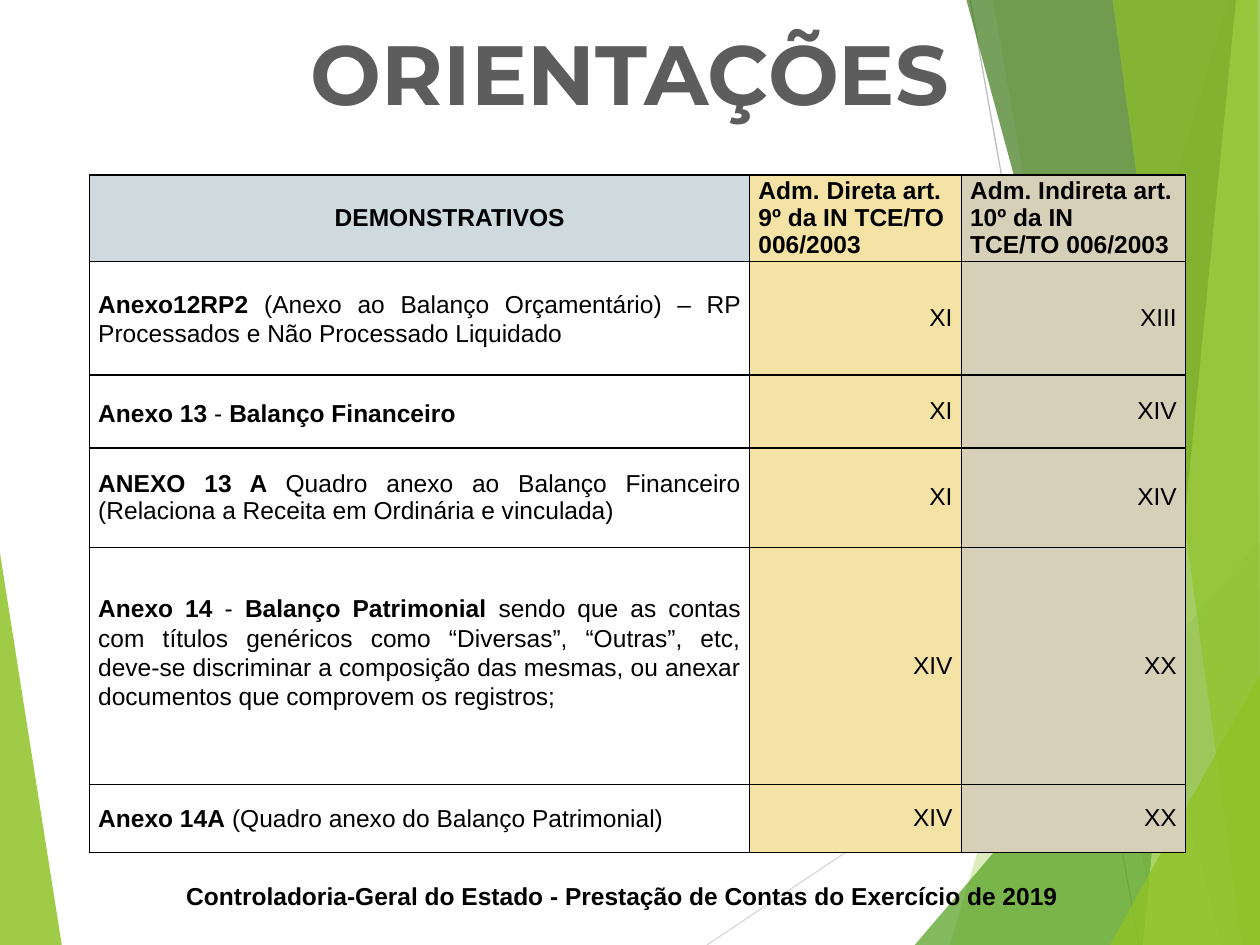
from dataclasses import dataclass

import lxml.etree
import pptx
import pptx.dml.color
import pptx.enum.shapes
import pptx.enum.text
import pptx.oxml.ns
import pptx.util

Inches = pptx.util.Inches
RGBColor = pptx.dml.color.RGBColor
Align = pptx.enum.text.PP_ALIGN
Anchor = pptx.enum.text.MSO_ANCHOR
qn = pptx.oxml.ns.qn

BLACK = RGBColor(0x00, 0x00, 0x00)
TITLE_GRAY = RGBColor(0x5D, 0x5D, 0x5D)
LIGHT_GRAY = RGBColor(0xD9, 0xD9, 0xD9)
MID_GRAY = RGBColor(0xBF, 0xBF, 0xBF)
LIME = RGBColor(0x90, 0xC2, 0x26)
GREEN = RGBColor(0x54, 0xA0, 0x21)
DARK_GREEN = RGBColor(0x3F, 0x78, 0x19)
PALE_LIME = RGBColor(0xC0, 0xE4, 0x74)
BLUE_GRAY = RGBColor(0xCF, 0xDA, 0xDF)
YELLOW = RGBColor(0xF5, 0xE3, 0xA5)
BEIGE = RGBColor(0xD6, 0xD0, 0xB8)

WIDTH, HEIGHT = 10, 7.5
Point = tuple[float, float]


@dataclass
class Facet:
    points: list[Point]
    color: RGBColor
    opacity: int


@dataclass
class Ray:
    start: Point
    end: Point
    color: RGBColor


@dataclass
class Span:
    text: str
    bold: bool = False


@dataclass
class Para:
    spans: list[Span]
    align: Align = Align.JUSTIFY
    spacing: float = 1.07
    margin: float = 0
    indent: float = 0


@dataclass
class Row:
    height: float
    description: Para
    direct: str
    indirect: str
    bottom: float = 0


RAYS = [
    Ray((5.61, HEIGHT), (WIDTH, 4.57), LIGHT_GRAY),
    Ray((7.7, 0), (9.04, HEIGHT), MID_GRAY),
]
FACETS = [
    Facet([(0, 4.39), (0.49, HEIGHT), (0, HEIGHT)], LIME, 85),
    Facet([(9.75, 0), (7.54, HEIGHT), (WIDTH, HEIGHT), (WIDTH, 0)], LIME, 30),
    Facet([(7.88, 0), (9.19, HEIGHT), (WIDTH, HEIGHT), (WIDTH, 0)], LIME, 20),
    Facet([(7.26, HEIGHT), (WIDTH, 4.29), (WIDTH, HEIGHT)], GREEN, 72),
    Facet([(7.67, 0), (9.7, HEIGHT), (WIDTH, HEIGHT), (WIDTH, 0)], DARK_GREEN, 70),
    Facet([(9.81, 0), (9.07, HEIGHT), (WIDTH, HEIGHT), (WIDTH, 0)], PALE_LIME, 70),
    Facet([(8.83, 0), (9.86, HEIGHT), (WIDTH, HEIGHT), (9.98, 0)], LIME, 65),
    Facet([(8.81, HEIGHT), (WIDTH, 5.35), (WIDTH, HEIGHT)], LIME, 80),
]

COLUMNS = [5.24, 1.68, 1.78]
FILLS = [None, YELLOW, BEIGE]
HEADER_HEIGHT = 0.63
HEADERS = [
    [Para([Span("DEMONSTRATIVOS", True)], Align.CENTER, 0.98, indent=0.48)],
    [Para([Span("Adm. Direta art. 9º da IN TCE/TO 006/2003", True)], Align.LEFT, 0.98)],
    [
        Para([Span("Adm. Indireta art. 10º da IN", True)], Align.LEFT, 0.98),
        Para([Span("TCE/TO 006/2003", True)], Align.LEFT, 0.98),
    ],
]
ROWS = [
    Row(0.9, Para([
        Span("Anexo12RP2 ", True),
        Span("(Anexo ao Balanço Orçamentário) – RP Processados e Não Processado Liquidado"),
    ]), "XI", "XIII"),
    Row(0.58, Para([
        Span("Anexo 13", True), Span(" - "), Span("Balanço Financeiro", True),
    ], spacing=1.15, margin=0.01, indent=-0.01), "XI", "XIV"),
    Row(0.79, Para([
        Span("ANEXO 13 A ", True),
        Span("Quadro anexo ao Balanço Financeiro (Relaciona a Receita em Ordinária e vinculada)"),
    ], spacing=0.98), "XI", "XIV"),
    Row(1.88, Para([
        Span("Anexo 14", True), Span(" - "), Span("Balanço Patrimonial ", True),
        Span("sendo que as contas com títulos genéricos como “Diversas”, “Outras”, etc, "
             "deve-se discriminar a composição das mesmas, ou anexar documentos que "
             "comprovem os registros;"),
    ]), "XIV", "XX", bottom=0.22),
    Row(0.54, Para([
        Span("Anexo 14A", True), Span(" (Quadro anexo do Balanço Patrimonial)"),
    ]), "XIV", "XX"),
]


def draw_ray(page, ray: Ray) -> None:
    line = page.shapes.add_connector(
        pptx.enum.shapes.MSO_CONNECTOR.STRAIGHT,
        *(Inches(value) for value in ray.start + ray.end))
    line.line.color.rgb = ray.color
    line.line.width = pptx.util.Pt(0.75)
    lxml.etree.SubElement(line._element.spPr, qn("a:effectLst"))


def draw_facet(page, facet: Facet) -> None:
    first, *others = [(Inches(x), Inches(y)) for x, y in facet.points]
    builder = page.shapes.build_freeform(*first)
    builder.add_line_segments(others)
    shape = builder.convert_to_shape()
    shape.shadow.inherit = False
    shape.line.fill.background()
    shape.fill.solid()
    shape.fill.fore_color.rgb = facet.color
    color = shape._element.spPr.find(".//" + qn("a:srgbClr"))
    lxml.etree.SubElement(color, qn("a:alpha"), val=str(facet.opacity * 1000))


def style_font(font, name: str, size: float, color: RGBColor) -> None:
    font.name = name
    font.size = pptx.util.Pt(size)
    font.color.rgb = color


def add_label(page, area: tuple, text: str, name: str, size: float, color: RGBColor) -> None:
    box = page.shapes.add_textbox(*(Inches(value) for value in area))
    box.text_frame.word_wrap = True
    para = box.text_frame.paragraphs[0]
    para.text = text
    para.alignment = Align.CENTER
    para.font.bold = True
    style_font(para.font, name, size, color)


def add_borders(cell) -> None:
    properties = cell._tc.get_or_add_tcPr()
    for side in ("lnL", "lnR", "lnT", "lnB"):
        border = lxml.etree.SubElement(properties, qn("a:" + side), w=str(pptx.util.Pt(1)))
        fill = lxml.etree.SubElement(border, qn("a:solidFill"))
        lxml.etree.SubElement(fill, qn("a:srgbClr"), val=str(BLACK))


def fill_cell(cell, paras: list[Para], color: RGBColor | None, bottom: float = 0) -> None:
    add_borders(cell)
    if color is None:
        cell.fill.background()
    else:
        cell.fill.solid()
        cell.fill.fore_color.rgb = color
    cell.vertical_anchor = Anchor.MIDDLE
    cell.margin_left = cell.margin_right = Inches(0.07)
    cell.margin_top, cell.margin_bottom = Inches(0), Inches(bottom)
    frame = cell.text_frame
    for index, item in enumerate(paras):
        para = frame.add_paragraph() if index else frame.paragraphs[0]
        para.alignment = item.align
        para.line_spacing = item.spacing
        layout = para._p.get_or_add_pPr()
        layout.set("marL", str(Inches(item.margin)))
        layout.set("indent", str(Inches(item.indent)))
        style_font(para.font, "Arial", 14, BLACK)
        for span in item.spans:
            run = para.add_run()
            run.text = span.text
            run.font.bold = span.bold


def draw_table(page) -> None:
    heights = [HEADER_HEIGHT] + [row.height for row in ROWS]
    table = page.shapes.add_table(
        len(heights), len(COLUMNS), Inches(0.71), Inches(1.39),
        Inches(sum(COLUMNS)), Inches(sum(heights))).table
    table.first_row = table.horz_banding = False
    for column, width in zip(table.columns, COLUMNS):
        column.width = Inches(width)
    for line, height in zip(table.rows, heights):
        line.height = Inches(height)
    for index, (paras, color) in enumerate(zip(HEADERS, [BLUE_GRAY, YELLOW, BEIGE])):
        fill_cell(table.cell(0, index), paras, color)
    for number, row in enumerate(ROWS, 1):
        numerals = [Para([Span(text)], Align.RIGHT, 0.98, indent=0.48)
                    for text in (row.direct, row.indirect)]
        for index, para in enumerate([row.description, *numerals]):
            fill_cell(table.cell(number, index), [para], FILLS[index],
                      0 if index else row.bottom)


def main() -> None:
    deck = pptx.Presentation()
    deck.slide_width, deck.slide_height = Inches(WIDTH), Inches(HEIGHT)
    page = deck.slides.add_slide(deck.slide_layouts[6])
    for ray in RAYS:
        draw_ray(page, ray)
    for facet in FACETS:
        draw_facet(page, facet)
    add_label(page, (0.55, 6.94, 8.78, 0.34),
              "Controladoria-Geral do Estado - Prestação de Contas do Exercício de 2019",
              "Arial", 14, BLACK)
    draw_table(page)
    add_label(page, (0.06, 0.12, 9.88, 0.91), "ORIENTAÇÕES", "Montserrat", 48, TITLE_GRAY)
    deck.save("out.pptx")


if __name__ == "__main__":
    main()
